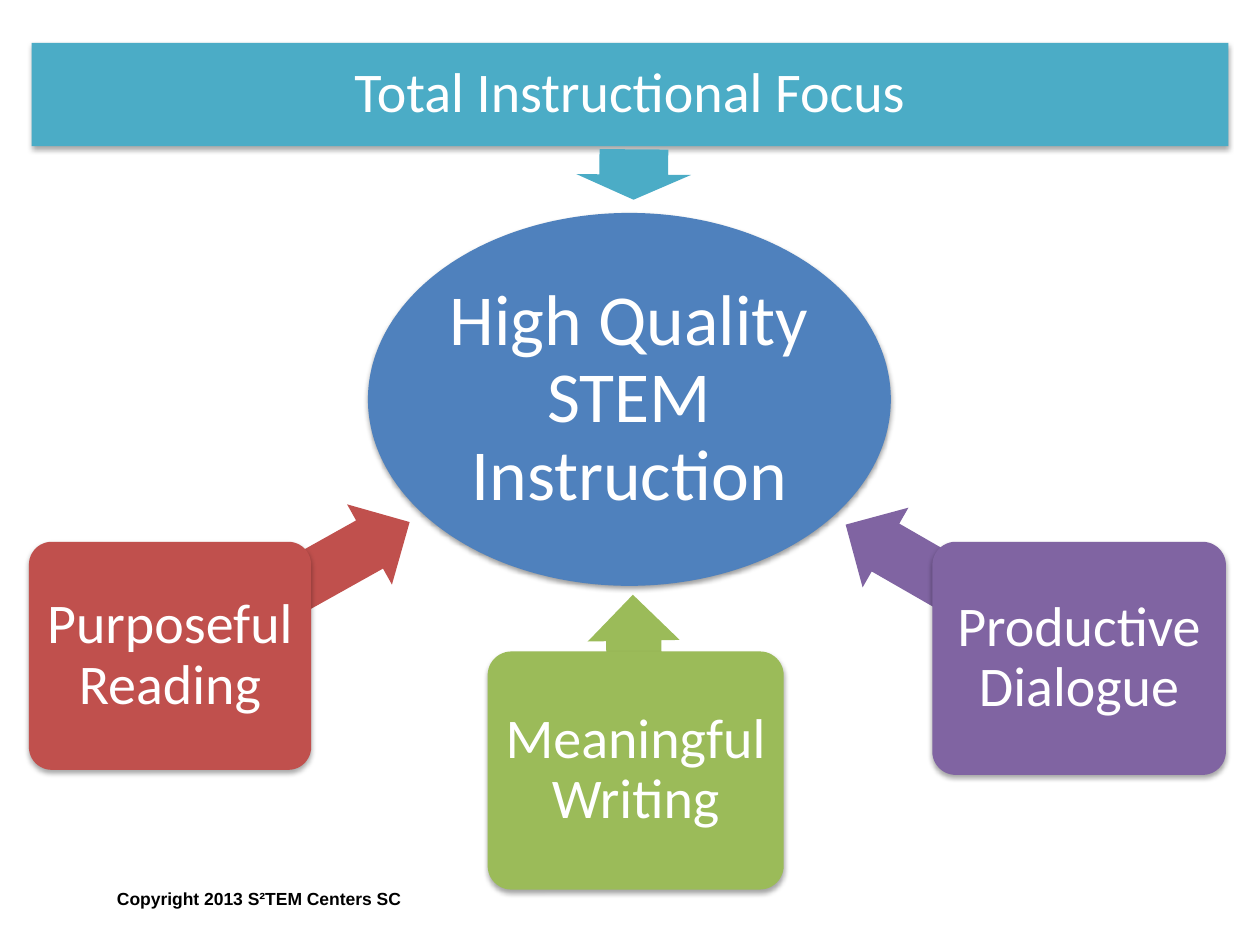
from dataclasses import dataclass

from lxml import etree
from pptx import Presentation
from pptx import util as u
from pptx.dml.color import RGBColor
from pptx.enum import shapes, text
from pptx.oxml import parse_xml
from pptx.oxml.ns import nsdecls, qn

COLUMNS, ROWS = 100, 75
COLORS = {
    "focus": "4BACC6",
    "core": "4F81BD",
    "reading": "C0504D",
    "writing": "9BBB59",
    "dialogue": "8064A2",
    "white": "FFFFFF",
    "black": "000000",
}
SHAPE = shapes.MSO_SHAPE


@dataclass(frozen=True)
class Frame:
    """Left, top, width and height in grid columns and rows."""
    left: float
    top: float
    width: float
    height: float


@dataclass(frozen=True)
class Practice:
    label: str
    color: str
    box: Frame
    arrow: Frame
    rotation: float


PRACTICES = [
    Practice("Purposeful Reading", "reading",
             Frame(2.3, 43, 22.4, 18.1), Frame(12.1, 43.1, 21.8, 7.3), 150.8),
    Practice("Meaningful Writing", "writing",
             Frame(38.7, 51.7, 23.5, 18.9), Frame(43.4, 50.5, 13.9, 7.3), 89),
    Practice("Productive Dialogue", "dialogue",
             Frame(74, 43, 23.3, 18.5), Frame(65.7, 43.3, 21.3, 7.3), 29.9),
]

deck = Presentation()
deck.slide_width, deck.slide_height = u.Inches(10), u.Inches(7.5)
slide = deck.slides.add_slide(deck.slide_layouts[5])


def place(frame: Frame) -> tuple[int, int, int, int]:
    column, row = deck.slide_width / COLUMNS, deck.slide_height / ROWS
    return (round(frame.left * column), round(frame.top * row),
            round(frame.width * column), round(frame.height * row))


def rgb(color: str) -> RGBColor:
    return RGBColor.from_string(COLORS[color])


def paint(shape, color: str) -> None:
    shape.fill.solid()
    shape.fill.fore_color.rgb = rgb(color)
    shape.line.fill.background()


def drop_shadow(shape, opacity: int, distance: float) -> None:
    properties = shape._element.spPr
    for effects in properties.findall(qn("a:effectLst")):
        properties.remove(effects)
    properties.append(parse_xml(
        f'<a:effectLst {nsdecls("a")}><a:outerShdw blurRad="{u.Pt(3.1)}" '
        f'dist="{u.Pt(distance)}" dir="5400000" rotWithShape="0">'
        f'<a:srgbClr val="{COLORS["black"]}"><a:alpha val="{opacity * 1000}"/>'
        '</a:srgbClr></a:outerShdw></a:effectLst>'))


def write_label(shape, label: str, size: float, inset: float) -> None:
    frame = shape.text_frame
    frame.text = label
    frame.word_wrap = True
    frame.auto_size = text.MSO_AUTO_SIZE.NONE
    frame.vertical_anchor = text.MSO_ANCHOR.MIDDLE
    frame.margin_left = frame.margin_right = u.Inches(inset)
    frame.margin_top = frame.margin_bottom = u.Inches(inset)
    paragraph = frame.paragraphs[0]
    paragraph.alignment = text.PP_ALIGN.CENTER
    paragraph.line_spacing = 0.9
    font = paragraph.runs[0].font
    font.name, font.size = "Calibri", u.Pt(size)
    font.color.rgb = rgb("white")


def add_arrow(frame: Frame, rotation: float, color: str) -> None:
    arrow = slide.shapes.add_shape(SHAPE.LEFT_ARROW, *place(frame))
    arrow.adjustments[0], arrow.adjustments[1] = 0.6, 0.5
    arrow.rotation = rotation
    arrow.shadow.inherit = False
    paint(arrow, color)


def add_practice(practice: Practice) -> None:
    add_arrow(practice.arrow, practice.rotation, practice.color)
    box = slide.shapes.add_shape(SHAPE.ROUNDED_RECTANGLE, *place(practice.box))
    box.adjustments[0] = 0.1
    paint(box, practice.color)
    drop_shadow(box, 35, 1.8)
    write_label(box, practice.label, 32, 0.07)


def format_title() -> None:
    """Turn the title placeholder into the rounded banner."""
    banner = slide.shapes.title
    banner.left, banner.top, banner.width, banner.height = place(
        Frame(2.5, 3.4, 95, 8.2))
    geometry = etree.SubElement(
        banner._element.spPr, qn("a:prstGeom"), prst="roundRect")
    guides = etree.SubElement(geometry, qn("a:avLst"))
    etree.SubElement(guides, qn("a:gd"), name="adj", fmla="val 10000")
    paint(banner, "focus")
    drop_shadow(banner, 35, 1.8)
    write_label(banner, "Total Instructional Focus", 32, 0.07)


def add_core() -> None:
    core = slide.shapes.add_shape(
        SHAPE.OVAL, *place(Frame(29.2, 16.9, 41.5, 29.6)))
    paint(core, "core")
    drop_shadow(core, 38, 1.6)
    write_label(core, "High Quality STEM Instruction", 41, 0.03)


def add_copyright() -> None:
    notice = slide.shapes.add_textbox(*place(Frame(8.3, 70, 24.8, 2.7)))
    notice.fill.solid()
    notice.fill.fore_color.rgb = rgb("white")
    frame = notice.text_frame
    frame.text = "Copyright 2013 S²TEM Centers SC"
    frame.word_wrap = False
    frame.auto_size = text.MSO_AUTO_SIZE.SHAPE_TO_FIT_TEXT
    font = frame.paragraphs[0].runs[0].font
    font.name, font.size, font.bold = "Arial", u.Pt(10), True
    font.color.rgb = rgb("black")


format_title()
add_core()
for practice in PRACTICES:
    add_practice(practice)
add_arrow(Frame(48.3, 9.3, 4, 9.1), 270.4, "focus")
add_copyright()
deck.save("out.pptx")
